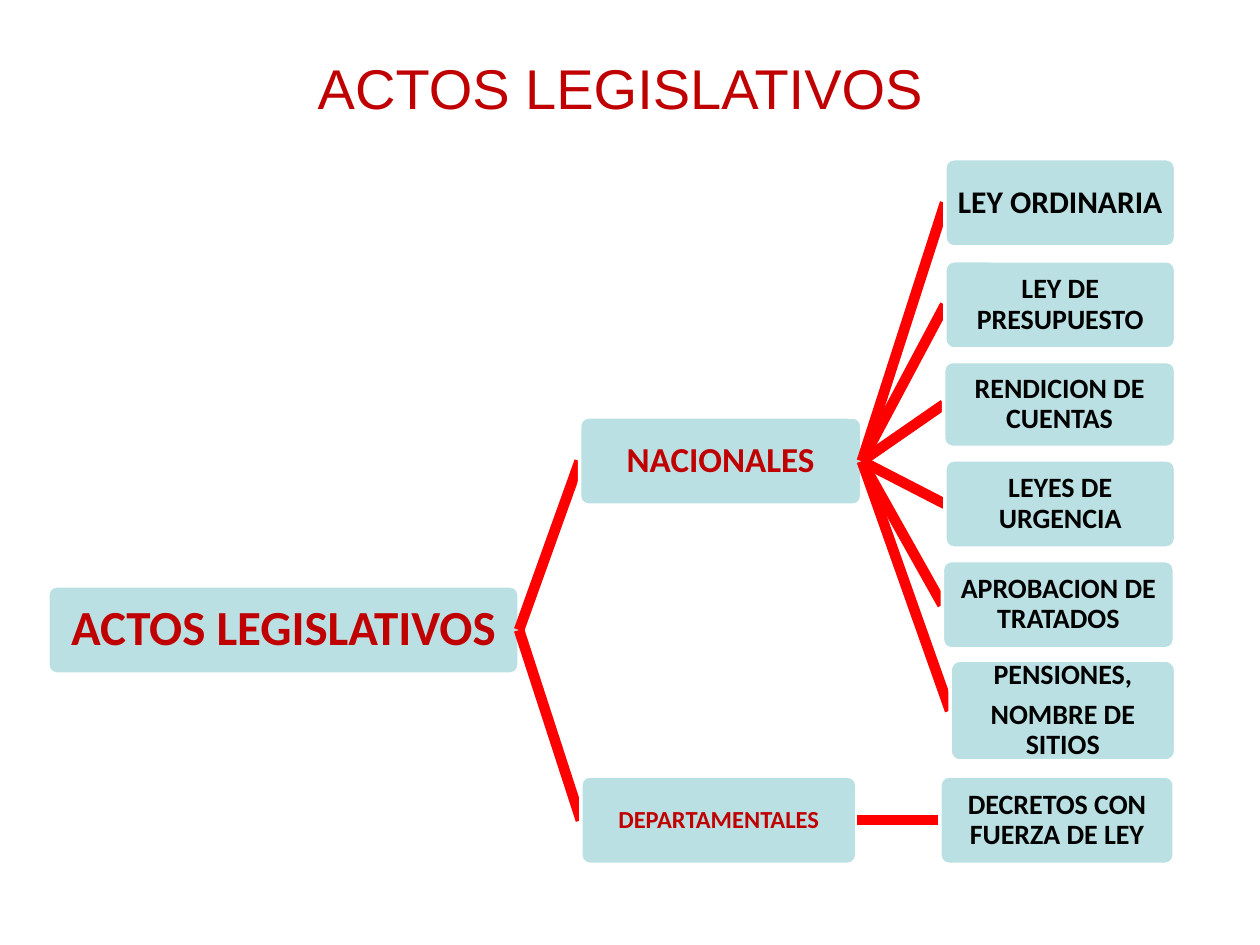
from dataclasses import dataclass

from lxml import etree
from pptx import Presentation
from pptx import util as u
from pptx.dml.color import RGBColor
from pptx.enum import shapes, text
from pptx.oxml.ns import qn

PX = 9144  # 100 px to the inch
RED = RGBColor(0xC0, 0x00, 0x00)
BRIGHT_RED = RGBColor(0xFF, 0x00, 0x00)
BLACK = RGBColor(0x00, 0x00, 0x00)
WHITE = RGBColor(0xFF, 0xFF, 0xFF)
PALE_TEAL = RGBColor(0xBB, 0xE0, 0xE3)
RIGHT_SIDE, LEFT_SIDE = 3, 1


@dataclass
class Node:
    """A box of the tree; lines are its paragraphs, box is relative to the tree."""
    lines: tuple
    box: tuple
    size: int
    color: RGBColor = RED
    children: tuple = ()


def leaf(lines, box, size=16):
    return Node(lines, box, size, BLACK)


NATIONAL = Node(("NACIONALES",), (422, 205, 224, 70), 20, children=(
    leaf(("LEY ORDINARIA",), (712, 0, 183, 70), 18),
    leaf(("LEY DE PRESUPUESTO",), (712, 81, 183, 70)),
    leaf(("RENDICION DE CUENTAS",), (711, 161, 184, 68)),
    leaf(("LEYES DE URGENCIA",), (712, 239, 183, 70)),
    leaf(("APROBACION DE TRATADOS",), (710, 319, 184, 70)),
    leaf(("PENSIONES,", "NOMBRE DE SITIOS"), (716, 398, 179, 80)),
))
DEPARTMENTAL = Node(("DEPARTAMENTALES",), (423, 490, 219, 70), 14, children=(
    leaf(("DECRETOS CON FUERZA DE LEY",), (708, 490, 186, 70)),
))
ACTS = Node(("ACTOS LEGISLATIVOS",), (0, 339, 374, 70), 28,
            children=(NATIONAL, DEPARTMENTAL))


def add_run(paragraph, wording, font_name, size, color, bold=False):
    run = paragraph.add_run()
    run.text = wording
    font = run.font
    font.name, font.size, font.bold = font_name, u.Pt(size), bold
    font.color.rgb = color


def add_title(slide, left, top, width, height):
    title = slide.shapes.add_textbox(*(PX * v for v in (left, top, width, height)))
    frame = title.text_frame
    frame.word_wrap = True
    frame.vertical_anchor = text.MSO_ANCHOR.MIDDLE
    heading = frame.paragraphs[0]
    heading.alignment = text.PP_ALIGN.CENTER
    add_run(heading, "ACTOS LEGISLATIVOS", "Arial", 32, RED)
    add_run(heading, " ", "Arial", 44, BLACK)


def add_box(slide, node, left, top):
    x, y, width, height = node.box
    box = slide.shapes.add_shape(
        shapes.MSO_SHAPE.ROUNDED_RECTANGLE,
        PX * (left + x), PX * (top + y), PX * width, PX * height)
    box.adjustments[0] = 0.1
    box.shadow.inherit = False
    box.fill.solid()
    box.fill.fore_color.rgb = PALE_TEAL
    box.line.color.rgb = WHITE
    box.line.width = u.Pt(2)

    frame = box.text_frame
    frame.word_wrap = True
    frame.vertical_anchor = text.MSO_ANCHOR.MIDDLE
    frame.margin_left = frame.margin_right = 3 * PX
    frame.margin_top = frame.margin_bottom = 3 * PX
    for index, line in enumerate(node.lines):
        paragraph = frame.add_paragraph() if index else frame.paragraphs[0]
        paragraph.alignment = text.PP_ALIGN.CENTER
        paragraph.line_spacing = 0.9
        paragraph.space_after = u.Pt(0.35 * node.size)
        add_run(paragraph, line, "Calibri", node.size, node.color, bold=True)
    return box


def add_branch(slide, parent_box):
    branch = slide.shapes.add_connector(shapes.MSO_CONNECTOR.STRAIGHT, 0, 0, 0, 0)
    branch.begin_connect(parent_box, RIGHT_SIDE)
    branch.line.color.rgb = BRIGHT_RED
    branch.line.width = u.Pt(6)
    etree.SubElement(branch._element.spPr, qn("a:effectLst"))
    return branch


def add_tree(slide, node, left, top):
    """Draws a node and its descendants; each branch lies behind its child."""
    box = add_box(slide, node, left, top)
    for child in node.children:
        branch = add_branch(slide, box)
        child_box = add_tree(slide, child, left, top)
        branch.end_connect(child_box, LEFT_SIDE)
    return box


def main():
    deck = Presentation()
    deck.slide_width, deck.slide_height = 1000 * PX, 750 * PX
    slide = deck.slides.add_slide(deck.slide_layouts[6])
    add_title(slide, 51, 0, 900, 125)
    add_tree(slide, ACTS, 38, 126)
    deck.save("out.pptx")


if __name__ == "__main__":
    main()
